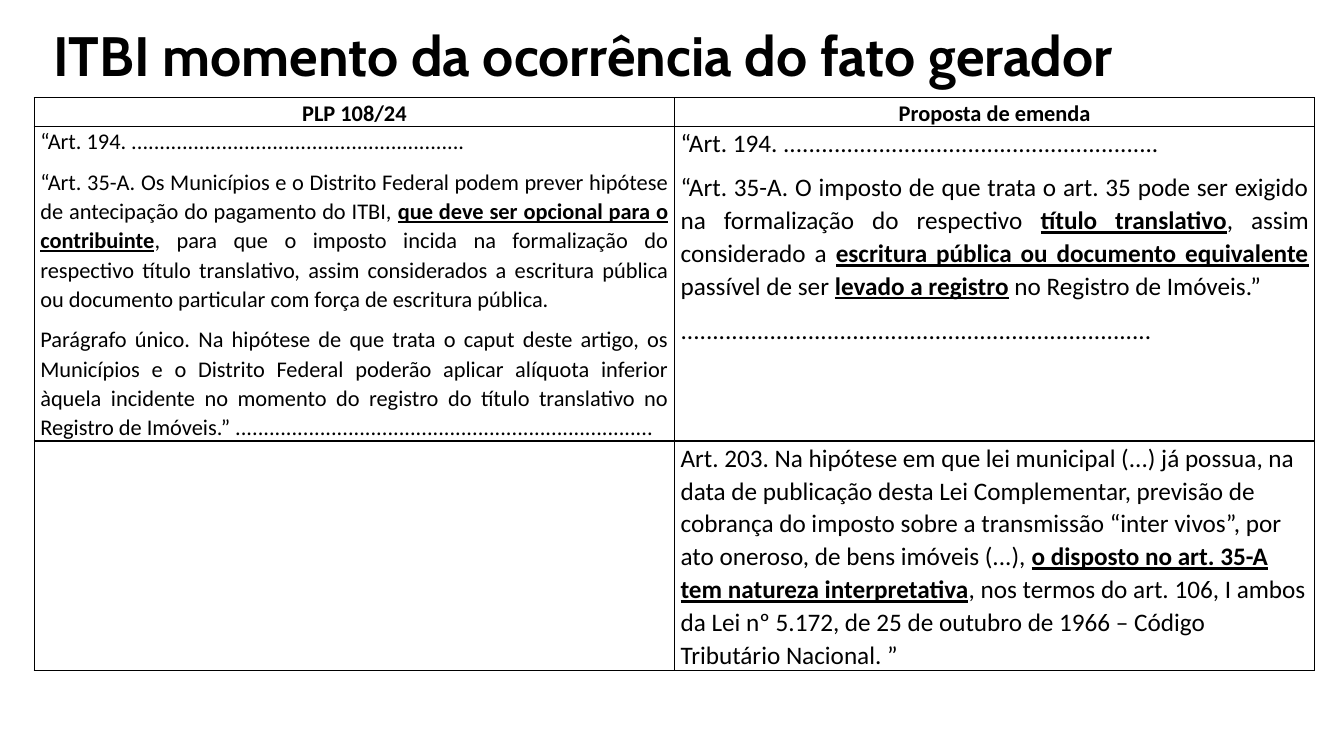
import pptx
import pptx.util
import pptx.dml.color
import pptx.enum.text
import pptx.oxml
import pptx.oxml.ns

ALIGN = pptx.enum.text.PP_ALIGN
ANCHOR = pptx.enum.text.MSO_ANCHOR
PX = 9144  # 100 px to the inch


def px(count):
    return pptx.util.Emu(count * PX)


def color(code):
    return pptx.dml.color.RGBColor.from_string(code)


class Deck:
    ink = "000000"
    paper = "FFFFFF"
    head = "Cabin"
    body = "Calibri"

    def __init__(self, wide, high):
        self.file = pptx.Presentation()
        self.file.slide_width, self.file.slide_height = px(wide), px(high)
        self.slide = self.file.slides.add_slide(self.file.slide_layouts[6])

    def style(self, run, face, size, bold, under=False):
        font = run.font
        font.name, font.size = face, pptx.util.Pt(size)
        font.bold, font.underline = bold, under
        font.color.rgb = color(self.ink)

    def title(self, text, left, top, wide, high):
        box = self.slide.shapes.add_textbox(px(left), px(top), px(wide), px(high))
        frame = box.text_frame
        frame.word_wrap = True
        frame.vertical_anchor = ANCHOR.MIDDLE
        frame.text = text
        para = frame.paragraphs[0]
        para.line_spacing = 0.9
        self.style(para.runs[0], self.head, 39.6, True)

    def table(self, left, top, cols, rows):
        shape = self.slide.shapes.add_table(
            len(rows), len(cols), px(left), px(top), px(sum(cols)), px(sum(rows)))
        table = shape.table
        table.first_row = table.horz_banding = False
        for col, wide in zip(table.columns, cols):
            col.width = px(wide)
        for row, high in zip(table.rows, rows):
            row.height = px(high)
        for cell in table.iter_cells():
            self.border(cell)
            cell.fill.solid()
            cell.fill.fore_color.rgb = color(self.paper)
            cell.margin_left = cell.margin_right = px(6)
            cell.margin_top = cell.margin_bottom = 0
        return table

    def border(self, cell):
        props = cell._tc.get_or_add_tcPr()
        space = pptx.oxml.ns.nsdecls("a")
        for side in "LRTB":
            props.append(pptx.oxml.parse_xml(
                f'<a:ln{side} {space} w="12700"><a:solidFill>'
                f'<a:srgbClr val="{self.ink}"/></a:solidFill></a:ln{side}>'))

    def entry(self, cell, texts, size, align, bold=False):
        """Words between asterisks are bold and underlined."""
        frame = cell.text_frame
        for num, text in enumerate(texts):
            para = frame.add_paragraph() if num else frame.paragraphs[0]
            para.alignment = align
            para.line_spacing = 1.07
            para.space_after = pptx.util.Pt(8)
            for part, words in enumerate(text.split("*")):
                run = para.add_run()
                run.text = words
                strong = part % 2 == 1
                self.style(run, self.body, size, bold or strong, strong)


def main():
    deck = Deck(1333, 750)
    deck.title("ITBI momento da ocorrência do fato gerador", 43, 7, 1072, 102)

    # Bill and amendment side by side
    table = deck.table(34, 97, [635, 635], [28, 312, 228])

    # Column heads
    for col, name in enumerate(["PLP 108/24", "Proposta de emenda"]):
        deck.entry(table.cell(0, col), [name], 16, ALIGN.CENTER, True)

    # Article 194
    opening = "“Art. 194. " + "." * 59
    dots = "." * 74
    deck.entry(table.cell(1, 0), [
        opening,
        "“Art. 35-A. Os Municípios e o Distrito Federal podem prever hipótese de "
        "antecipação do pagamento do ITBI, *que deve ser opcional para o contribuinte*, "
        "para que o imposto incida na formalização do respectivo título translativo, "
        "assim considerados a escritura pública ou documento particular com força de "
        "escritura pública.",
        "Parágrafo único. Na hipótese de que trata o caput deste artigo, os Municípios "
        "e o Distrito Federal poderão aplicar alíquota inferior àquela incidente no "
        "momento do registro do título translativo no Registro de Imóveis.” " + dots,
    ], 16, ALIGN.JUSTIFY)
    deck.entry(table.cell(1, 1), [
        opening,
        "“Art. 35-A. O imposto de que trata o art. 35 pode ser exigido na formalização "
        "do respectivo *título translativo*, assim considerado a *escritura pública ou "
        "documento equivalente* passível de ser *levado a registro* no Registro de "
        "Imóveis.”",
        dots,
    ], 18, ALIGN.JUSTIFY)

    # Article 203
    deck.entry(table.cell(2, 1), [
        "Art. 203. Na hipótese em que lei municipal (...) já possua, na data de "
        "publicação desta Lei Complementar, previsão de cobrança do imposto sobre a "
        "transmissão “inter vivos”, por ato oneroso, de bens imóveis (...), *o disposto "
        "no art. 35-A tem natureza interpretativa*, nos termos do art. 106, I ambos da "
        "Lei nº 5.172, de 25 de outubro de 1966 – Código Tributário Nacional. ”",
    ], 18, ALIGN.LEFT)

    deck.file.save("out.pptx")


if __name__ == "__main__":
    main()
